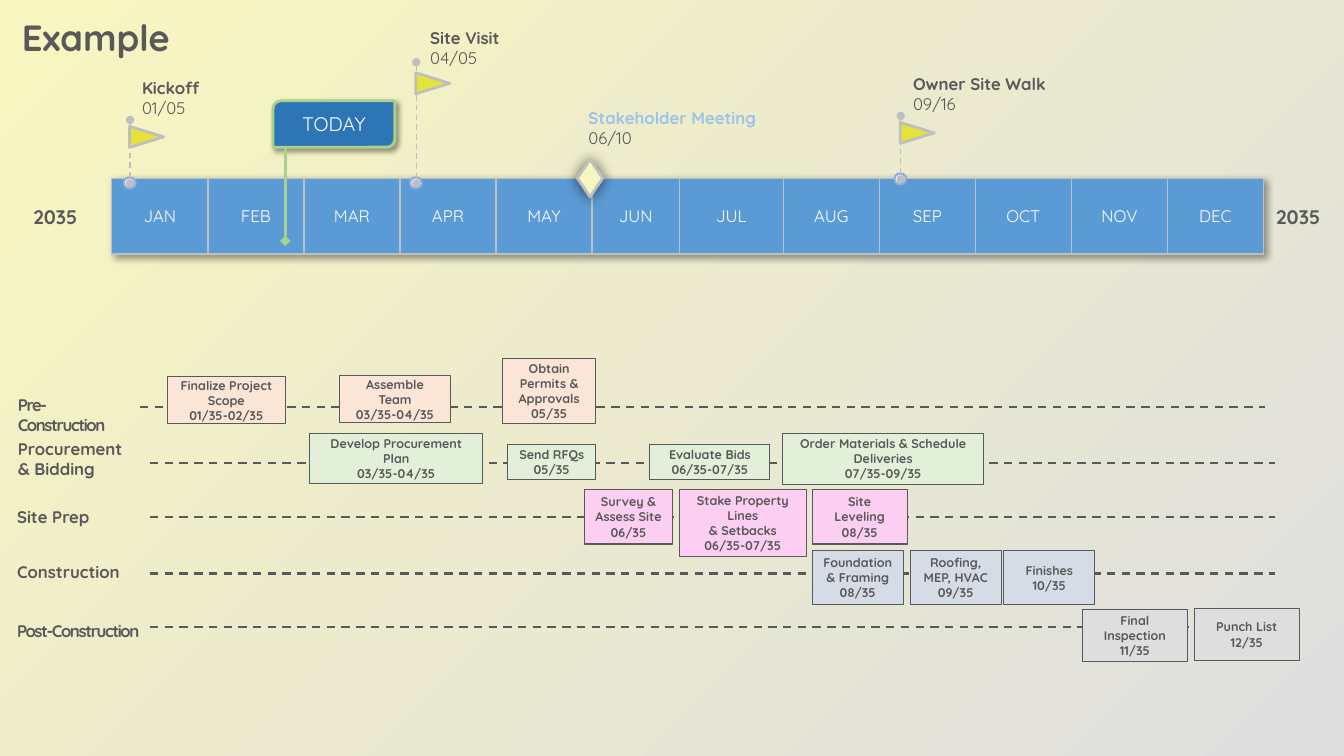
import dataclasses

import lxml.etree
import pptx
import pptx.dml.color
import pptx.enum.dml
import pptx.enum.shapes
import pptx.enum.text
import pptx.oxml.ns
import pptx.util

Cm = pptx.util.Cm
Pt = pptx.util.Pt
SHAPE = pptx.enum.shapes.MSO_SHAPE
ALIGN = pptx.enum.text.PP_ALIGN
ANCHOR = pptx.enum.text.MSO_ANCHOR
qn = pptx.oxml.ns.qn


@dataclasses.dataclass(frozen=True)
class Theme:
    font: str = "Quicksand"
    ink: str = "595959"
    white: str = "FFFFFF"
    gray: str = "BFBFBF"
    month: str = "5B9BD5"
    today: str = "2E75B6"
    today_edge: str = "A9D18E"
    meeting: str = "9DC3E6"
    pin: str = "F2F2F2"
    pin_edge: str = "8FAADC"
    flag: str = "E4E438"
    cream: str = "F7F6C0"
    silver: str = "DEDEDE"
    peach: str = "FBE5D6"
    green: str = "E2F0D9"
    pink: str = "FCCEF2"
    steel: str = "D6DCE5"
    shade: str = "000000"
    title_size: int = 26
    accent_size: int = 14
    body_size: int = 12
    task_size: int = 9


def rgb(color):
    return pptx.dml.color.RGBColor.from_string(color)


class TimelineSlide:
    def __init__(self, deck, theme):
        self.theme = theme
        self.slide = deck.slides.add_slide(deck.slide_layouts[6])
        self.shapes = self.slide.shapes

    def start_group(self):
        self.shapes = self.slide.shapes.add_group_shape().shapes

    def end_group(self):
        self.shapes = self.slide.shapes

    def cast_shadow(self, effects, blur, distance, opacity):
        shadow = lxml.etree.SubElement(
            effects, qn("a:outerShdw"), blurRad=str(Pt(blur)), dist=str(Pt(distance)),
            dir="2700000", algn="ctr", rotWithShape="0")
        tint = lxml.etree.SubElement(shadow, qn("a:srgbClr"), val=self.theme.shade)
        lxml.etree.SubElement(tint, qn("a:alpha"), val=str(opacity * 1000))

    def fill_text(self, frame, lines, size, align=ALIGN.LEFT, spacing=0):
        for index, (text, color, bold) in enumerate(lines):
            paragraph = frame.add_paragraph() if index else frame.paragraphs[0]
            paragraph.text = text
            paragraph.alignment = align
            for run in paragraph.runs:
                run.font.name = self.theme.font
                run.font.size = Pt(size)
                run.font.bold = bold
                run.font.color.rgb = rgb(color)
                if spacing:
                    run._r.get_or_add_rPr().set("spc", str(spacing * 100))

    def text(self, box, lines, size, align=ALIGN.LEFT, spacing=0, grow=True):
        frame = self.shapes.add_textbox(*map(Cm, box)).text_frame
        frame.word_wrap = True
        if grow:
            frame.auto_size = pptx.enum.text.MSO_AUTO_SIZE.SHAPE_TO_FIT_TEXT
        self.fill_text(frame, lines, size, align, spacing)

    def shape(self, kind, box, fill, edge=None, width=1, rotation=0, shadow=None):
        shape = self.shapes.add_shape(kind, *map(Cm, box))
        shape.shadow.inherit = False
        shape.rotation = rotation
        shape.fill.solid()
        shape.fill.fore_color.rgb = rgb(fill)
        if edge:
            shape.line.color.rgb = rgb(edge)
            shape.line.width = Pt(width)
        else:
            shape.line.fill.background()
        if shadow:
            self.cast_shadow(shape._element.spPr.find(qn("a:effectLst")), *shadow)
        return shape

    def backdrop(self, width, height):
        fill = self.shape(SHAPE.RECTANGLE, (0, 0, width, height), self.theme.silver).fill
        fill.gradient()
        fill.gradient_angle = 135
        for stop, color in zip(fill.gradient_stops, (self.theme.silver, self.theme.cream)):
            stop.color.rgb = rgb(color)
        fill.gradient_stops[0].position, fill.gradient_stops[1].position = 0, 1

    def line(self, start, end, color, width, dashed=True, head=None, tail=None):
        line = self.shapes.add_connector(
            pptx.enum.shapes.MSO_CONNECTOR.STRAIGHT, *map(Cm, start + end))
        line.line.color.rgb = rgb(color)
        line.line.width = Pt(width)
        if dashed:
            line.line.dash_style = pptx.enum.dml.MSO_LINE.DASH
        properties = line._element.spPr
        outline = properties.find(qn("a:ln"))
        for tag, ending in (("a:headEnd", head), ("a:tailEnd", tail)):
            if ending:
                lxml.etree.SubElement(outline, qn(tag), type=ending)
        lxml.etree.SubElement(properties, qn("a:effectLst"))

    def months(self, left, top, height, widths):
        table = self.shapes.add_table(
            1, len(widths), Cm(left), Cm(top), Cm(sum(widths.values())), Cm(height)).table
        table.first_row = table.horz_banding = False
        table.rows[0].height = Cm(height)
        effects = lxml.etree.Element(qn("a:effectLst"))
        self.cast_shadow(effects, 5, 2, 40)
        table._tbl.tblPr.insert(0, effects)
        for column, (month, width) in enumerate(widths.items()):
            table.columns[column].width = Cm(width)
            cell = table.cell(0, column)
            cell.fill.solid()
            cell.fill.fore_color.rgb = rgb(self.theme.month)
            cell.vertical_anchor = ANCHOR.MIDDLE
            self.fill_text(cell.text_frame, [(month, self.theme.white, False)],
                           self.theme.body_size, ALIGN.CENTER)
            for index, side in enumerate("LRTB"):
                border = lxml.etree.Element(qn("a:ln" + side), w=str(Pt(1)))
                solid = lxml.etree.SubElement(border, qn("a:solidFill"))
                lxml.etree.SubElement(solid, qn("a:srgbClr"), val=self.theme.gray)
                cell._tc.tcPr.insert(index, border)

    def event(self, name, date, box, color):
        self.text(box, [(name, color, True), (date, self.theme.ink, False)],
                  self.theme.body_size, grow=False)

    def pin(self, x, top, bottom, flag_drop):
        theme = self.theme
        self.start_group()
        self.shape(SHAPE.OVAL, (x - 0.16, bottom - 0.15, 0.3, 0.28), theme.pin, theme.pin_edge, 1.5)
        self.line((x, top), (x, bottom), theme.gray, 1, head="oval", tail="oval")
        self.shape(SHAPE.ISOSCELES_TRIANGLE, (x + 0.15, top + flag_drop, 0.53, 0.86),
                   theme.flag, theme.gray, 2, rotation=90)
        self.end_group()

    def today(self, box, stem_x, stem_end):
        theme = self.theme
        self.start_group()
        sign = self.shape(SHAPE.ROUND_2_DIAG_RECTANGLE, box, theme.today, theme.today_edge, 2,
                          shadow=(4, 3, 40))
        sign.text_frame.vertical_anchor = ANCHOR.MIDDLE
        self.fill_text(sign.text_frame, [("TODAY", theme.white, False)],
                       theme.accent_size, ALIGN.CENTER)
        self.line((stem_x, box[1] + box[3]), (stem_x, stem_end), theme.today_edge, 2.5,
                  dashed=False, tail="diamond")
        self.end_group()

    def task(self, name, dates, box, fill):
        frame = self.shape(SHAPE.RECTANGLE, box, fill, self.theme.ink, 0.75).text_frame
        frame.word_wrap = True
        frame.vertical_anchor = ANCHOR.MIDDLE
        self.fill_text(frame, [(line, self.theme.ink, True) for line in (name, dates)],
                       self.theme.task_size, ALIGN.CENTER)


def main():
    theme = Theme()
    deck = pptx.Presentation()
    deck.slide_width, deck.slide_height = Cm(33.87), Cm(19.05)
    slide = TimelineSlide(deck, theme)
    slide.backdrop(33.87, 19.05)

    lanes = [
        ("Pre-Construction", (0.2, 9.83, 3.38, 0.76), -1, (3.53, 10.26), theme.peach, [
            ("Finalize Project Scope", "01/35-02/35", (4.22, 9.5, 2.97, 1.17)),
            ("Assemble Team", "03/35-04/35", (8.56, 9.47, 2.79, 1.19)),
            ("Obtain Permits & Approvals", "05/35", (12.67, 9.04, 2.34, 1.63))]),
        ("Procurement\n& Bidding", (0.2, 10.92, 4.37, 1.27), 0, (3.78, 11.66), theme.green, [
            ("Develop Procurement Plan", "03/35-04/35", (7.8, 10.92, 4.37, 1.27)),
            ("Send RFQs", "05/35", (12.8, 11.2, 2.21, 0.89)),
            ("Evaluate Bids", "06/35-07/35", (16.38, 11.2, 3.02, 0.89)),
            ("Order Materials & Schedule Deliveries", "07/35-09/35", (19.72, 10.92, 5.07, 1.28))]),
        ("Site Prep", (0.18, 12.65, 4.37, 0.76), 0, (3.78, 13.03), theme.pink, [
            ("Survey & Assess Site", "06/35", (14.73, 12.34, 2.22, 1.37)),
            ("Stake Property Lines\n& Setbacks", "06/35-07/35", (17.12, 12.34, 3.2, 1.68)),
            ("Site Leveling", "08/35", (20.47, 12.34, 2.39, 1.37))]),
        ("Construction", (0.18, 14.02, 4.37, 0.76), 0, (3.78, 14.45), theme.steel, [
            ("Foundation & Framing", "08/35", (20.47, 13.87, 2.29, 1.37)),
            ("Roofing, MEP, HVAC", "09/35", (22.94, 13.87, 2.29, 1.37)),
            ("Finishes", "10/35", (25.3, 13.87, 2.29, 1.37))]),
        ("Post-Construction", (0.18, 15.52, 4.37, 0.76), -1, (3.78, 15.8), theme.silver, [
            ("Final Inspection", "11/35", (27.28, 15.36, 2.64, 1.3)),
            ("Punch List", "12/35", (30.1, 15.34, 2.64, 1.3))]),
    ]
    for _, _, _, (start, y), _, _ in lanes:
        slide.line((start, y), (start + 28.35, y), theme.ink, 1.5)

    widths = dict.fromkeys("JAN FEB MAR APR MAY JUN JUL AUG SEP OCT NOV DEC".split(), 2.42)
    widths.update(JUN=2.2, JUL=2.62)
    slide.months(2.82, 4.5, 1.9, widths)
    slide.today((6.88, 2.54, 3.07, 1.17), 7.19, 6.07)
    for left in (0.51, 31.83):
        slide.text((left, 5.03, 1.78, 0.86), [("2035", theme.ink, True)],
                   theme.accent_size, ALIGN.CENTER)

    for pin in ((3.28, 3.02, 4.62, 0), (10.49, 1.57, 4.62, 0.1), (22.7, 2.92, 4.52, 0)):
        slide.pin(*pin)
    slide.shape(SHAPE.FLOWCHART_DECISION, (14.4, 4.17, 0.94, 0.64), theme.cream, theme.gray, 2,
                rotation=90, shadow=(10, 0, 60))
    slide.event("Kickoff", "01/05", (3.33, 1.83, 4.83, 1.63), theme.ink)
    slide.event("Site Visit", "04/05", (10.59, 0.58, 4.83, 1.24), theme.ink)
    slide.event("Stakeholder Meeting", "06/10", (14.58, 2.59, 4.83, 1.12), theme.meeting)
    slide.event("Owner Site Walk", "09/16", (22.76, 1.73, 4.83, 1.63), theme.ink)

    for phase, box, spacing, _, fill, tasks in lanes:
        slide.text(box, [(phase, theme.ink, True)], theme.body_size, spacing=spacing)
        for name, dates, place in tasks:
            slide.task(name, dates, place, fill)
    slide.text((0.3, 0.25, 6.58, 1.37), [("Example", theme.ink, True)], theme.title_size)
    deck.save("out.pptx")


if __name__ == "__main__":
    main()
